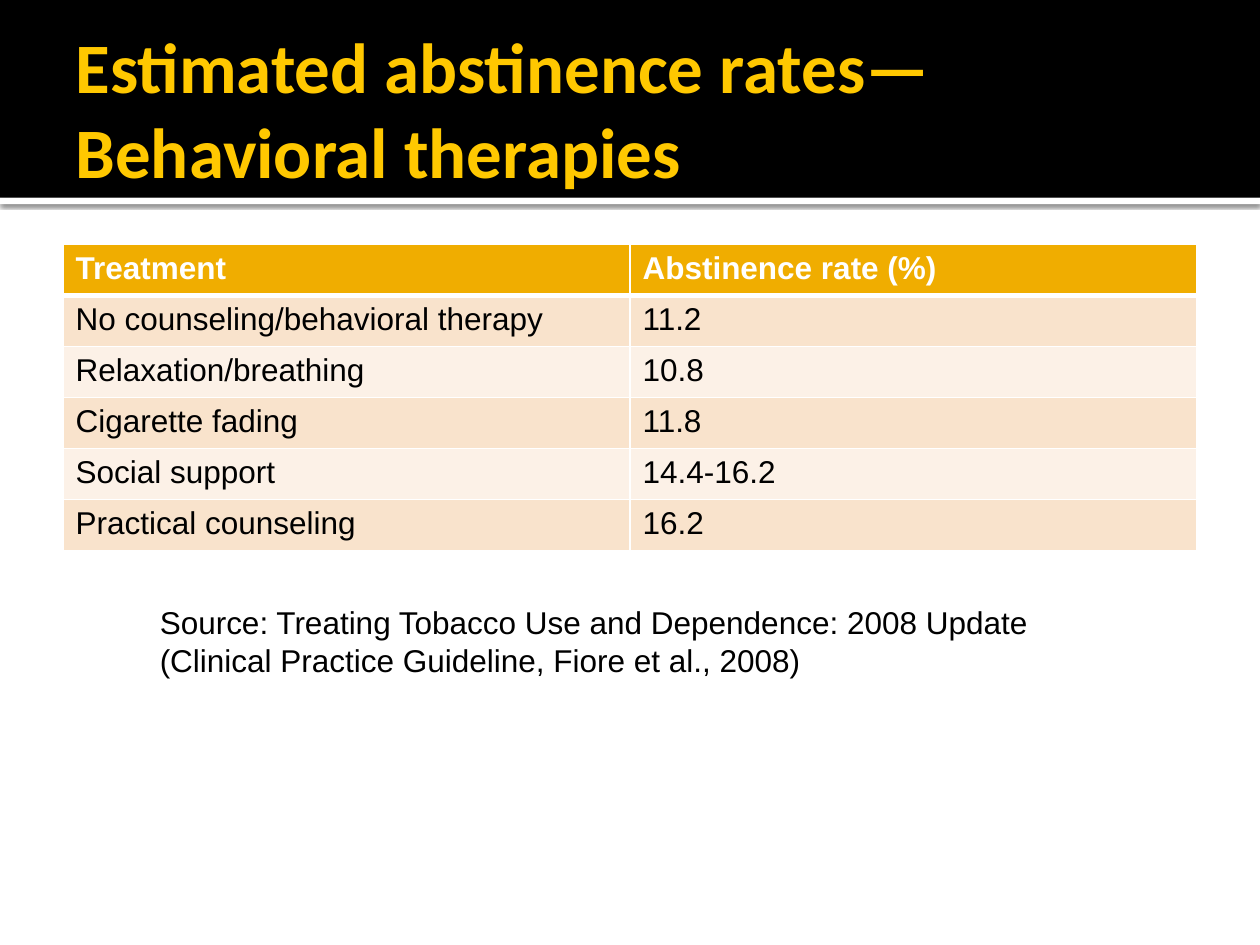
from lxml.etree import SubElement
from pptx import Presentation
from pptx.dml.color import RGBColor
from pptx.enum.shapes import MSO_SHAPE
from pptx.enum.text import MSO_ANCHOR, MSO_AUTO_SIZE, PP_ALIGN
from pptx.oxml.ns import qn
from pptx.util import Inches, Pt

COLORS = {
    "black": "000000",
    "white": "FFFFFF",
    "title": "FFC800",
    "header": "F0AD00",
    "band_dark": "F9E3CC",
    "band_light": "FCF1E7",
}
TITLE_FONT = {"name": "Calibri", "size": Pt(40.5), "bold": True}
BODY_FONT = {"name": "Arial", "size": Pt(18), "bold": False}
HEADER_FONT = {**BODY_FONT, "bold": True}

RATES = [
    ("Treatment", "Abstinence rate (%)"),
    ("No counseling/behavioral therapy", "11.2"),
    ("Relaxation/breathing", "10.8"),
    ("Cigarette fading", "11.8"),
    ("Social support", "14.4-16.2"),
    ("Practical counseling", "16.2"),
]


def set_all(target, values):
    for name, value in values.items():
        setattr(target, name, value)


def place(left, top, width, height):
    return [Inches(length) for length in (left, top, width, height)]


class SlideBuilder:
    """Holds the colours and the current slide."""

    def __init__(self, slide, colors):
        self.slide = slide
        self.colors = colors

    def rgb(self, name):
        return RGBColor.from_string(self.colors[name])

    def paint(self, target, color):
        target.fill.solid()
        target.fill.fore_color.rgb = self.rgb(color)

    def format_text(self, frame, font, color):
        for para in frame.paragraphs:
            for span in para.runs:
                set_all(span.font, font)
                span.font.color.rgb = self.rgb(color)

    def title(self, text, at, font, color):
        box = self.slide.shapes.title
        set_all(box, dict(zip(("left", "top", "width", "height"), place(*at))))
        frame = box.text_frame
        frame.text = text
        set_all(frame, {
            "auto_size": MSO_AUTO_SIZE.NONE,
            "vertical_anchor": MSO_ANCHOR.MIDDLE,
            "word_wrap": True,
            "margin_left": Inches(0.1),
            "margin_right": Inches(0.05),
        })
        frame.paragraphs[0].alignment = PP_ALIGN.LEFT
        self.format_text(frame, font, color)

    def band(self, at, color, shadow=False):
        """Add a full-width bar behind the title."""
        bar = self.slide.shapes.add_shape(MSO_SHAPE.RECTANGLE, *place(*at))
        self.paint(bar, color)
        bar.line.fill.background()
        bar.shadow.inherit = False
        if shadow:
            effects = bar._element.spPr.find(qn("a:effectLst"))
            outer = SubElement(effects, qn("a:outerShdw"), blurRad=str(Pt(2.5)),
                               dist=str(Pt(0.8)), dir="5400000", rotWithShape="0")
            tint = SubElement(outer, qn("a:srgbClr"), val=self.colors["black"])
            SubElement(tint, qn("a:alpha"), val="60000")
        self.slide.shapes.title._element.addprevious(bar._element)

    def cell_borders(self, cell, widths, color):
        properties = cell._tc.get_or_add_tcPr()
        for side, width in widths.items():
            line = SubElement(properties, qn(f"a:ln{side}"), w=str(Pt(width)))
            fill = SubElement(line, qn("a:solidFill"))
            SubElement(fill, qn("a:srgbClr"), val=self.colors[color])

    def table(self, rows, at):
        frame = self.slide.shapes.add_table(len(rows), len(rows[0]), *place(*at))
        for row_index, values in enumerate(rows):
            is_header = row_index == 0
            band = "band_dark" if row_index % 2 else "band_light"
            widths = {"L": 1, "R": 1, "T": 3 if row_index == 1 else 1,
                      "B": 3 if is_header else 1}
            for column_index, value in enumerate(values):
                cell = frame.table.cell(row_index, column_index)
                cell.text = value
                self.cell_borders(cell, widths, "white")
                self.paint(cell, "header" if is_header else band)
                self.format_text(cell.text_frame,
                                 HEADER_FONT if is_header else BODY_FONT,
                                 "white" if is_header else "black")

    def text(self, text, at, font, color):
        frame = self.slide.shapes.add_textbox(*place(*at)).text_frame
        frame.text = text
        set_all(frame, {"word_wrap": True,
                        "auto_size": MSO_AUTO_SIZE.SHAPE_TO_FIT_TEXT})
        self.format_text(frame, font, color)


def main():
    deck = Presentation()
    set_all(deck, {"slide_width": Inches(10), "slide_height": Inches(7.5)})
    page = SlideBuilder(deck.slides.add_slide(deck.slide_layouts[5]), COLORS)
    page.band((0, 1.57, 10, 0.05), "white", shadow=True)
    page.band((0, 0, 10, 1.57), "black")
    page.title("Estimated abstinence rates—\vBehavioral therapies",
               (0.5, 0.17, 9, 1.37), TITLE_FONT, "title")
    page.table(RATES, (0.5, 1.94, 9, 2.43))
    page.text("Source: Treating Tobacco Use and Dependence: 2008 Update "
              "(Clinical Practice Guideline, Fiore et al., 2008)",
              (1.17, 4.74, 7.67, 0.71), BODY_FONT, "black")
    deck.save("out.pptx")


if __name__ == "__main__":
    main()
